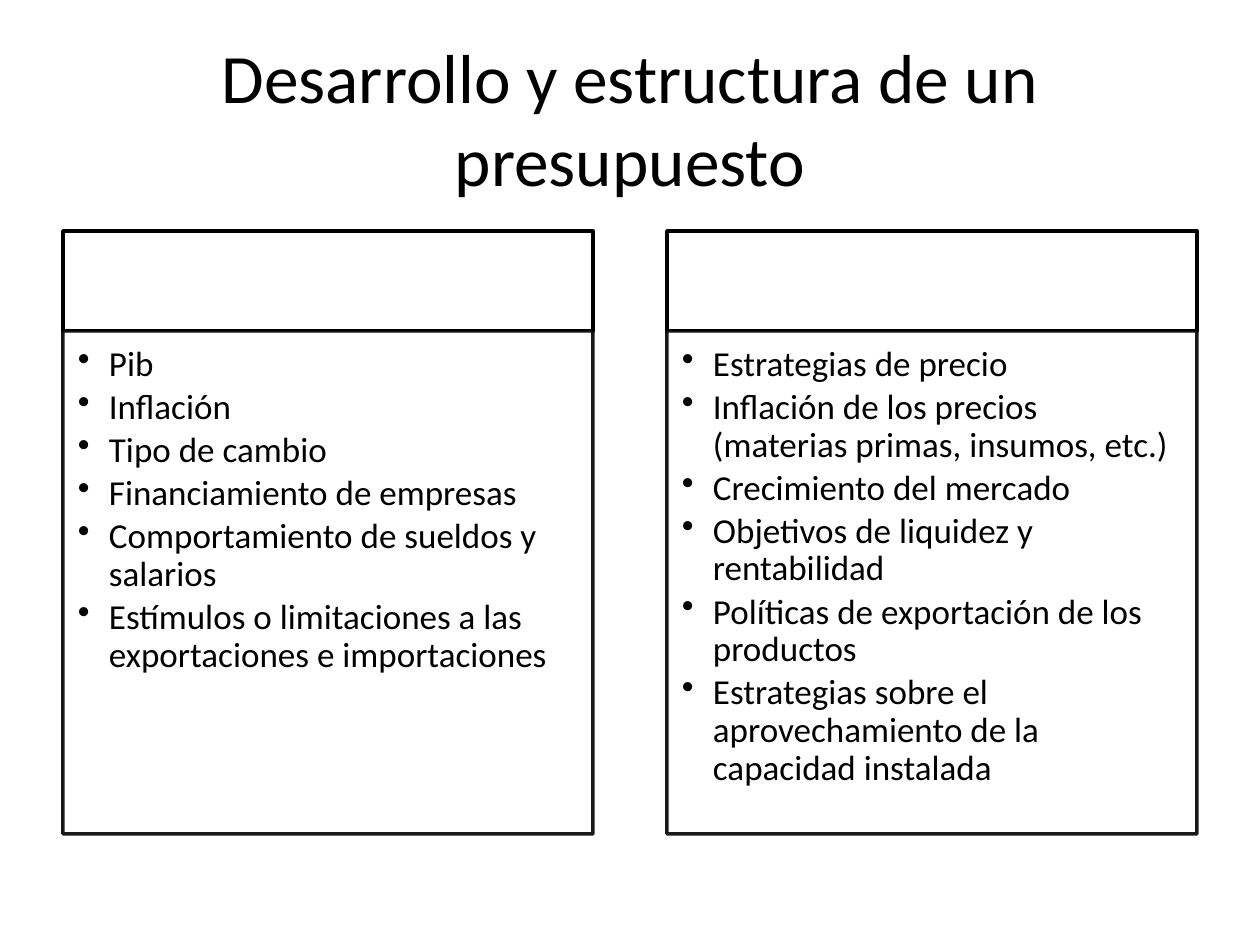
import pptx
import pptx.dml.color
import pptx.enum.shapes
import pptx.enum.text
import pptx.oxml
import pptx.oxml.ns
import pptx.util

EMU_PER_PX = 914400 / 126
BLACK = pptx.dml.color.RGBColor(0x00, 0x00, 0x00)
WHITE = pptx.dml.color.RGBColor(0xFF, 0xFF, 0xFF)
FONT = "Calibri"

TITLE = "Desarrollo y estructura de un presupuesto"
COLUMNS = [
    [
        "Pib",
        "Inflación",
        "Tipo de cambio",
        "Financiamiento de empresas",
        "Comportamiento de sueldos y salarios",
        "Estímulos o limitaciones a las exportaciones e importaciones",
    ],
    [
        "Estrategias de precio",
        "Inflación de los precios (materias primas, insumos, etc.)",
        "Crecimiento del mercado",
        "Objetivos de liquidez y rentabilidad",
        "Políticas de exportación de los productos",
        "Estrategias sobre el aprovechamiento de la capacidad instalada",
    ],
]


def px(length):
    return pptx.util.Emu(round(length * EMU_PER_PX))


def format_runs(paragraph, size):
    for run in paragraph.runs:
        run.font.name = FONT
        run.font.size = pptx.util.Pt(size)
        run.font.color.rgb = BLACK


def set_opacity(color_format_parent, percent):
    """Make the solid colour below the given XML element partly transparent."""
    for color in color_format_parent.iter(pptx.oxml.ns.qn("a:srgbClr")):
        alpha = pptx.oxml.parse_xml(
            f'<a:alpha {pptx.oxml.ns.nsdecls("a")} val="{percent * 1000}"/>')
        color.append(alpha)


def add_bullet(paragraph, indent):
    properties = paragraph._p.get_or_add_pPr()
    properties.set("marL", str(indent))
    properties.set("indent", str(-indent))
    bullet = pptx.oxml.parse_xml(
        f'<a:buChar {pptx.oxml.ns.nsdecls("a")} char="•"/>')
    properties.append(bullet)


def add_box(slide, left, top, width, height):
    box = slide.shapes.add_shape(
        pptx.enum.shapes.MSO_SHAPE.RECTANGLE,
        px(left), px(top), px(width), px(height))
    box.shadow.inherit = False
    box.fill.solid()
    box.fill.fore_color.rgb = WHITE
    box.line.color.rgb = BLACK
    box.line.width = pptx.util.Pt(2)
    return box


def place_title(slide, left, top, width, height):
    title = slide.shapes.title
    title.left, title.top = px(left), px(top)
    title.width, title.height = px(width), px(height)
    frame = title.text_frame
    frame.text = TITLE
    frame.word_wrap = True
    frame.auto_size = pptx.enum.text.MSO_AUTO_SIZE.NONE
    frame.vertical_anchor = pptx.enum.text.MSO_ANCHOR.MIDDLE
    paragraph = frame.paragraphs[0]
    paragraph.alignment = pptx.enum.text.PP_ALIGN.CENTER
    format_runs(paragraph, 39.6)


def add_column(slide, items, left, top, width, height):
    """Place an empty header box with a bulleted list box below it."""
    header_height = 100
    add_box(slide, left, top, width, header_height)
    body = add_box(slide, left, top + header_height,
                   width, height - header_height)
    set_opacity(body._element.spPr, 90)

    frame = body.text_frame
    frame.word_wrap = True
    frame.vertical_anchor = pptx.enum.text.MSO_ANCHOR.TOP
    frame.margin_left = frame.margin_top = px(15)
    frame.margin_right = px(20)
    frame.margin_bottom = px(21)
    frame.text = "\n".join(items)
    for paragraph in frame.paragraphs:
        paragraph.level = 1
        paragraph.alignment = pptx.enum.text.PP_ALIGN.LEFT
        paragraph.line_spacing = 0.9
        paragraph.space_before = pptx.util.Pt(0)
        paragraph.space_after = pptx.util.Pt(3)
        add_bullet(paragraph, px(31))
        format_runs(paragraph, 20)


def main():
    presentation = pptx.Presentation()
    presentation.slide_width = px(1260)
    presentation.slide_height = px(945)
    slide = presentation.slides.add_slide(presentation.slide_layouts[5])

    margin, column_width = 63, 530
    content_width = 1260 - 2 * margin
    place_title(slide, margin, 38, content_width, 158)
    column_step = content_width - column_width
    for index, items in enumerate(COLUMNS):
        add_column(slide, items, margin + index * column_step, 231,
                   column_width, 603)

    presentation.save("out.pptx")


if __name__ == "__main__":
    main()
